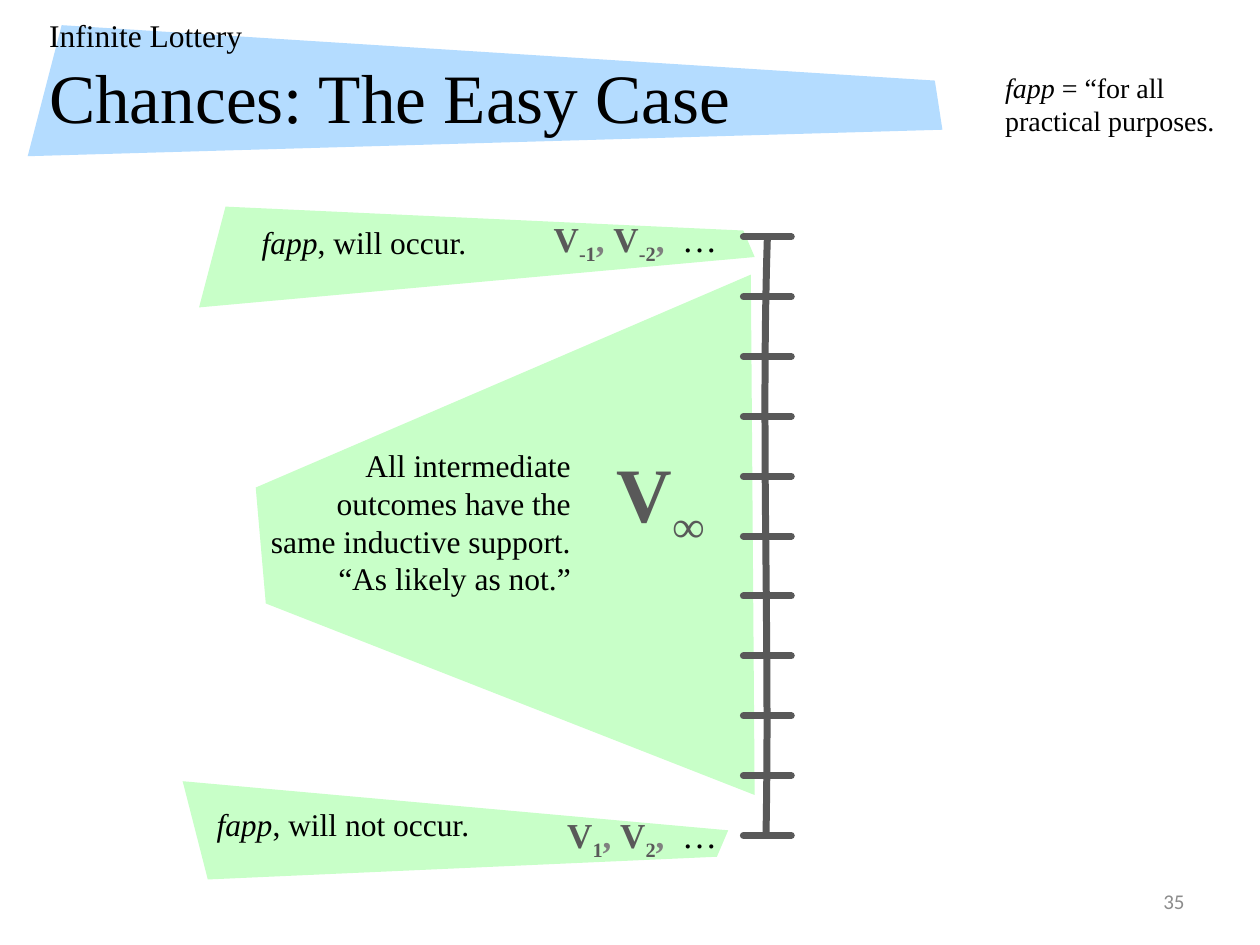
from lxml import etree
from pptx import Presentation
from pptx.dml.color import RGBColor
from pptx.enum.shapes import MSO_CONNECTOR
from pptx.enum.text import MSO_ANCHOR, MSO_AUTO_SIZE, PP_ALIGN
from pptx.oxml.ns import qn
from pptx.util import Inches, Pt

SERIF = "Times New Roman"
BLACK, DARK, GRAY, PALE = "000000", "595959", "808080", "8C8C8C"
BLUE, GREEN = "B4DCFF", "C8FFC8"
LEFT, RIGHT = PP_ALIGN.LEFT, PP_ALIGN.RIGHT

# Content: a run is (text, style), where style holds what departs from the paragraph
ITALIC, SUB = {"italic": True}, {"baseline": -25}
COMMA, DOTS = {"color": GRAY}, {"color": BLACK, "bold": False}


def values(first, second):
    return [("V", {}), (first, SUB), (", ", COMMA), ("V", {}), (second, SUB),
            (",  ", COMMA), ("…", DOTS)]


TITLE = [("Infinite Lottery", 18), ("Chances: The Easy Case", 39.6)]
TITLE_WEDGE = [(0.49, 0.2), (7.42, 0.64), (7.48, 1.03), (0.22, 1.24)]
WEDGES = [
    [(1.79, 1.64), (5.9, 1.83), (5.99, 2.04), (1.58, 2.44)],
    [(5.96, 2.18), (5.99, 6.31), (2.11, 4.79), (2.03, 3.87)],
    [(1.65, 6.98), (5.69, 6.8), (5.78, 6.59), (1.45, 6.2)],
]
# Box, paragraphs, size, colour, alignment, wrap
NOTES = [
    ((1.88, 1.72, 1.92, 0.4), [[("fapp", ITALIC), (", will occur.", {})]],
     18, BLACK, RIGHT, False),
    ((7.88, 0.51, 1.9, 0.64), [[("fapp", ITALIC), (" = “for all practical purposes.", {})]],
     16, BLACK, LEFT, True),
    ((2, 3.49, 2.63, 1.31),
     [[("All intermediate outcomes have the same inductive support.", {})],
      [("“As likely as not.”", {})]], 18, BLACK, RIGHT, True),
    ((1.62, 6.34, 2.31, 0.4), [[("fapp", ITALIC), (", will not occur.", {})]],
     18, BLACK, LEFT, False),
]
LABELS = [
    ((4.75, 3.49, 0.94, 0.84), [("V", {}), ("∞", SUB)], 44),
    ((4.39, 6.41, 1.4, 0.44), values("1", "2"), 20),
    ((4.27, 1.68, 1.52, 0.44), values("-1", "-2"), 20),
]
AXIS_CURVE = [(6.09, 1.9), (6.04, 3.49), (6.11, 5.04), (6.08, 6.63)]
TICK_LEFT, TICK_RIGHT, TICK_TOP, TICK_BOTTOM, TICK_COUNT = 5.9, 6.28, 1.88, 6.63, 11


def rgb(color):
    return RGBColor.from_string(color)


def place(shape, box):
    shape.left, shape.top, shape.width, shape.height = map(Inches, box)


def add_outline(slide, points, close):
    corners = [(Inches(x), Inches(y)) for x, y in points]
    builder = slide.shapes.build_freeform(*corners[0])
    builder.add_line_segments(corners[1:], close=close)
    shape = builder.convert_to_shape()
    shape.shadow.inherit = False
    return shape


def add_wedge(slide, points, color):
    shape = add_outline(slide, points, True)
    shape.fill.solid()
    shape.fill.fore_color.rgb = rgb(color)
    shape.line.fill.background()
    return shape


def style_stroke(shape):
    shape.line.color.rgb = rgb(DARK)
    shape.line.width = Pt(4)
    properties = shape.element.spPr
    properties.find(qn("a:ln")).set("cap", "rnd")
    if properties.find(qn("a:effectLst")) is None:
        etree.SubElement(properties, qn("a:effectLst"))


def add_text(slide, box, paragraphs, size, color, align=LEFT, wrap=False,
             bold=False, font=SERIF):
    shape = slide.shapes.add_textbox(*map(Inches, box))
    frame = shape.text_frame
    frame.word_wrap = wrap
    for index, runs in enumerate(paragraphs):
        paragraph = frame.add_paragraph() if index else frame.paragraphs[0]
        paragraph.alignment = align
        for text, style in runs:
            run = paragraph.add_run()
            run.text = text
            run.font.name, run.font.size = font, Pt(size)
            run.font.bold = style.get("bold", bold)
            run.font.italic = style.get("italic", False)
            run.font.color.rgb = rgb(style.get("color", color))
            if "baseline" in style:
                run.font._element.set("baseline", str(style["baseline"] * 1000))
    return shape


def bezier(points, steps=24):
    for step in range(steps + 1):
        t = step / steps
        weights = ((1 - t) ** 3, 3 * t * (1 - t) ** 2, 3 * t * t * (1 - t), t ** 3)
        yield tuple(sum(w * p[axis] for w, p in zip(weights, points)) for axis in (0, 1))


def add_title(slide):
    title = slide.shapes.title
    place(title, (0.29, 0.14, 7.43, 0.94))
    frame = title.text_frame
    frame.auto_size = MSO_AUTO_SIZE.NONE
    frame.vertical_anchor = MSO_ANCHOR.MIDDLE
    paragraph = frame.paragraphs[0]
    paragraph.alignment = LEFT
    paragraph.font.name = SERIF
    paragraph.font.color.rgb = rgb(BLACK)
    for index, (text, size) in enumerate(TITLE):
        if index:
            paragraph.add_line_break()
        run = paragraph.add_run()
        run.text = text
        run.font.name, run.font.size = SERIF, Pt(size)
        run.font.color.rgb = rgb(BLACK)


def add_scale(slide):
    axis = add_outline(slide, list(bezier(AXIS_CURVE)), False)
    axis.fill.background()
    style_stroke(axis)
    gap = (TICK_BOTTOM - TICK_TOP) / (TICK_COUNT - 1)
    for index in range(TICK_COUNT):
        y = Inches(TICK_TOP + index * gap)
        tick = slide.shapes.add_connector(
            MSO_CONNECTOR.STRAIGHT, Inches(TICK_LEFT), y, Inches(TICK_RIGHT), y)
        style_stroke(tick)


def main():
    presentation = Presentation()
    presentation.slide_width, presentation.slide_height = Inches(10), Inches(7.5)
    slide = presentation.slides.add_slide(presentation.slide_layouts[5])

    # Title on its wedge
    add_title(slide)
    banner = add_wedge(slide, TITLE_WEDGE, BLUE)
    slide.shapes.title.element.addprevious(banner.element)

    # Wedges and notes
    for points in WEDGES:
        add_wedge(slide, points, GREEN)
    for box, paragraphs, size, color, align, wrap in NOTES:
        add_text(slide, box, paragraphs, size, color, align, wrap)

    # Scale with its value labels
    add_scale(slide)
    for box, runs, size in LABELS:
        add_text(slide, box, [runs], size, DARK, RIGHT, bold=True)

    # Slide number
    number = add_text(slide, (7.17, 6.95, 2.33, 0.4), [[("35", {})]], 12, PALE, RIGHT,
                      wrap=True, font="Calibri")
    number.text_frame.vertical_anchor = MSO_ANCHOR.MIDDLE

    presentation.save("out.pptx")


if __name__ == "__main__":
    main()
